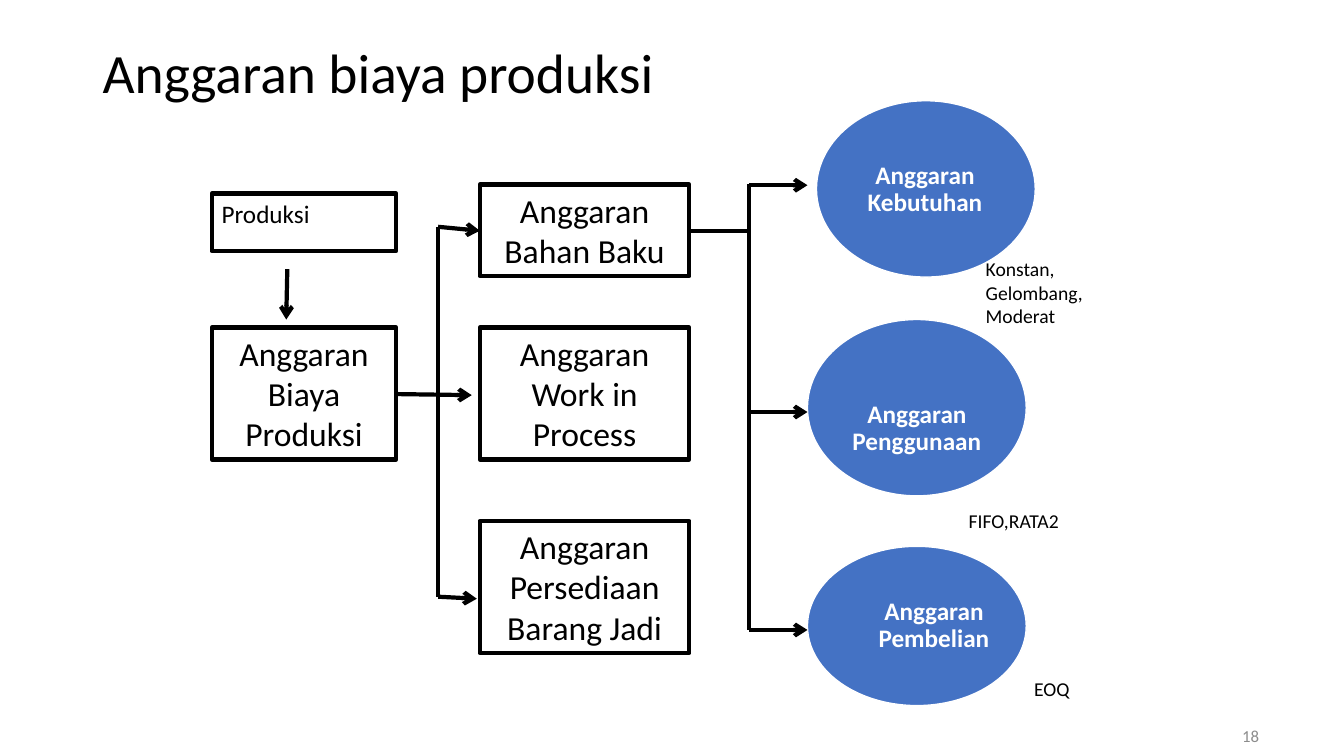
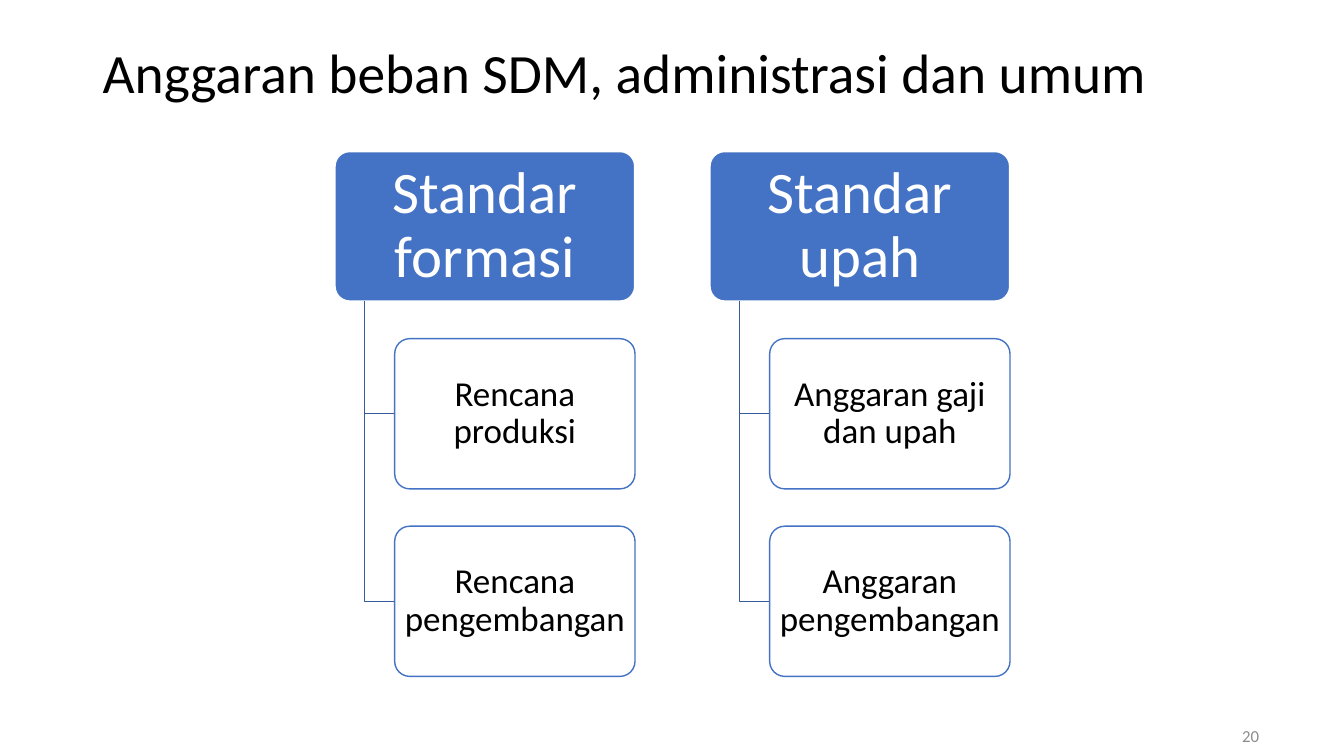
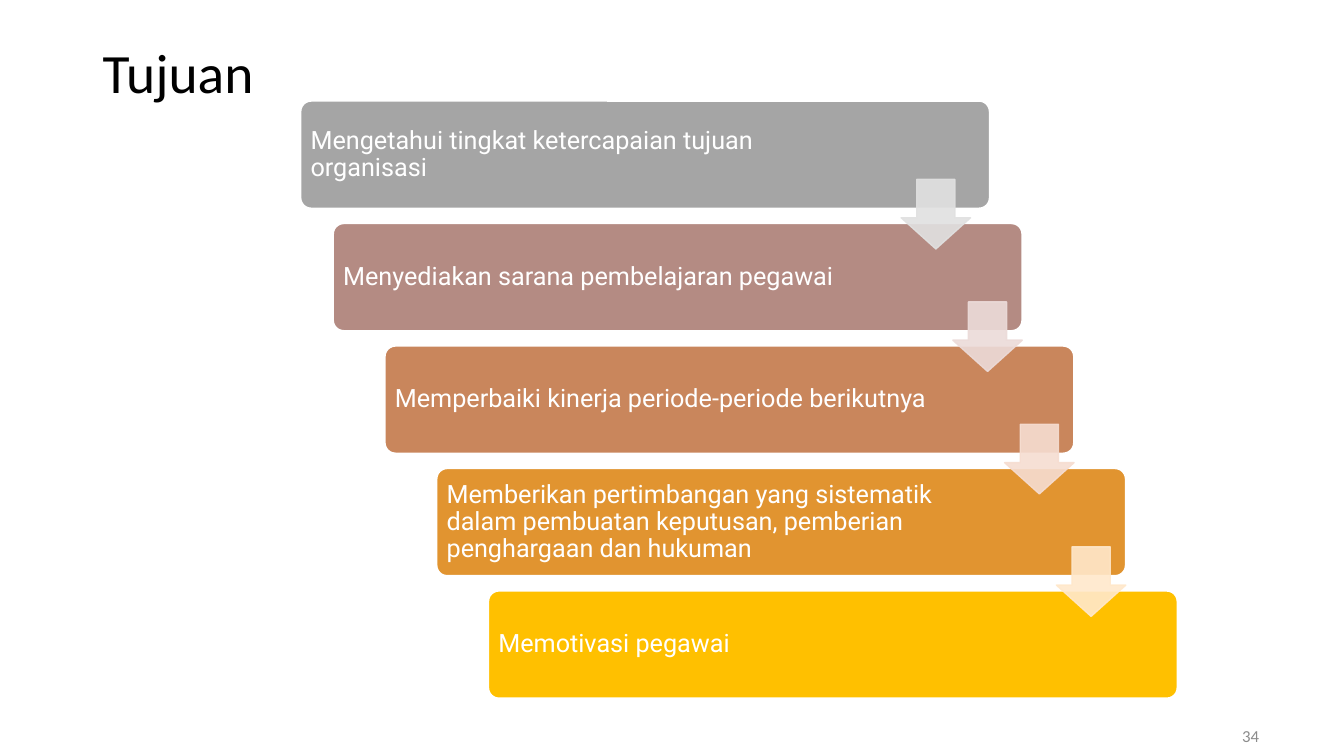
from lxml.etree import SubElement
from pptx import Presentation
from pptx.dml.color import RGBColor
from pptx.enum.shapes import MSO_CONNECTOR, MSO_SHAPE
from pptx.enum.text import MSO_ANCHOR, PP_ALIGN
from pptx.oxml.ns import qn
from pptx.util import Inches, Pt

SLIDE_WIDTH, SLIDE_HEIGHT = Inches(13.33), Inches(7.5)
COLOURS = {
    "ink": "000000", "paper": "FFFFFF", "accent": "4472C4",
    "branch": "365B9D", "page": "8C8C8C",
}
STEP_COLOURS = ["A5A5A5", "B48B83", "C9865C", "E19430", "FFC000"]
ARROW_COLOURS = ["E1E1E1", "ECDBD9", "F6DDD1", "FFE8CB"]
BODY_FONT, STEP_FONT = "Calibri", "Roboto"


def across(share):
    """Percent of the slide width as a length."""
    return round(SLIDE_WIDTH * share / 100)


def down(share):
    """Percent of the slide height as a length."""
    return round(SLIDE_HEIGHT * share / 100)


def place(left, top, width, height):
    return across(left), down(top), across(width), down(height)


def colour(name):
    return RGBColor.from_string(COLOURS.get(name, name))


def write(shape, text, size, ink="ink", font=BODY_FONT, align=PP_ALIGN.LEFT,
          anchor=MSO_ANCHOR.MIDDLE, spacing=None, bold=False,
          margins=(0.1, 0.05, 0.1, 0.05)):
    """Fill a shape with one paragraph; margins are left, top, right, bottom."""
    frame = shape.text_frame
    frame.word_wrap = True
    frame.vertical_anchor = anchor
    (frame.margin_left, frame.margin_top,
     frame.margin_right, frame.margin_bottom) = map(Inches, margins)
    paragraph = frame.paragraphs[0]
    paragraph.alignment = align
    paragraph.line_spacing = spacing
    run = paragraph.add_run()
    run.text = text
    run.font.name = font
    run.font.size = Pt(size)
    run.font.bold = bold
    run.font.color.rgb = colour(ink)


def add_text(slide, box, text, size, **style):
    write(slide.shapes.add_textbox(*place(*box)), text, size, **style)


def style_outline(shape, fill, line, width):
    shape.shadow.inherit = False
    if fill:
        shape.fill.solid()
        shape.fill.fore_color.rgb = colour(fill)
    else:
        shape.fill.background()
    shape.line.color.rgb = colour(line)
    shape.line.width = Pt(width)


def add_figure(slide, kind, box, fill, line, width, adjustments=()):
    shape = slide.shapes.add_shape(kind, *place(*box))
    style_outline(shape, fill, line, width)
    for index, value in enumerate(adjustments):
        shape.adjustments[index] = value
    return shape


def add_card(slide, box, fill, line, width):
    return add_figure(slide, MSO_SHAPE.ROUNDED_RECTANGLE, box, fill, line, width, [0.1])


def fade(shape, percent):
    """Set the opacity of a shape's fill and line."""
    for element in shape.element.spPr.iter(qn("a:srgbClr")):
        SubElement(element, qn("a:alpha"), val=str(percent * 1000))


def add_line(slide, start, end, arrow=False):
    line = slide.shapes.add_connector(
        MSO_CONNECTOR.STRAIGHT, across(start[0]), down(start[1]),
        across(end[0]), down(end[1]))
    line.line.color.rgb = colour("ink")
    line.line.width = Pt(3)
    if arrow:
        SubElement(line.line._get_or_add_ln(), qn("a:tailEnd"), type="arrow")
    SubElement(line.element.spPr, qn("a:effectLst"))


def add_elbow(slide, left, top, right, bottom):
    """Draw a branch that goes down and then right."""
    builder = slide.shapes.build_freeform(across(left), down(top))
    builder.add_line_segments(
        [(across(left), down(bottom)), (across(right), down(bottom))], close=False)
    style_outline(builder.convert_to_shape(), None, "branch", 1)


def add_slide(presentation, title, number):
    slide = presentation.slides.add_slide(presentation.slide_layouts[6])
    add_text(slide, (6.9, 5.33, 86.25, 9.2), title, 39.6, spacing=0.9)
    add_text(slide, (71.93, 95.6, 22.5, 3.47), number, 12, ink="page",
             align=PP_ALIGN.RIGHT)
    return slide


def build_production(presentation):
    slide = add_slide(presentation, "Anggaran biaya produksi", "18")

    source, budget = (15.75, 13.73), (35.7, 15.6)
    for (left, width), top, height, text, size, align in [
        (source, 25.6, 7.6, "Produksi", 18, PP_ALIGN.LEFT),
        (source, 43.33, 17.47, "Anggaran Biaya Produksi", 24, PP_ALIGN.CENTER),
        (budget, 24.4, 12.13, "Anggaran Bahan Baku", 24, PP_ALIGN.CENTER),
        (budget, 43.33, 17.47, "Anggaran Work in Process", 24, PP_ALIGN.CENTER),
        (budget, 68.93, 17.47, "Anggaran Persediaan Barang Jadi", 24, PP_ALIGN.CENTER),
    ]:
        box = add_figure(slide, MSO_SHAPE.RECTANGLE, (left, top, width, height),
                         None, "ink", 3)
        write(box, text, size, align=align, anchor=MSO_ANCHOR.TOP)

    for left, top, height, label_left, label_top, text in [
        (60.75, 13.33, 23.33, 63.08, 16.8, "Anggaran Kebutuhan"),
        (60.08, 42.27, 23.33, 62.48, 48.4, "Anggaran Penggunaan"),
        (60.08, 72.27, 21.07, 63.75, 75.33, "Anggaran Pembelian"),
    ]:
        add_figure(slide, MSO_SHAPE.OVAL, (left, top, 16.28, height),
                   "accent", "paper", 1)
        add_text(slide, (label_left, label_top, 11.48, height * 0.71), text, 18,
                 ink="paper", bold=True, align=PP_ALIGN.CENTER, spacing=0.9,
                 margins=(0.05,) * 4)

    budget_trunk, detail_trunk, detail_tip = 32.6, 55.73, 60.08
    add_line(slide, (budget_trunk, 30), (budget_trunk, 78.93))
    add_line(slide, (detail_trunk, 24.4), (detail_trunk, 83.33))
    add_line(slide, (51.38, 30.53), (detail_trunk, 30.53))
    for start, end in [
        ((21.38, 35.6), (21.3, 42.27)),
        ((29.48, 52.13), (35.1, 52.27)),
        ((budget_trunk, 30), (35.7, 30.53)),
        ((budget_trunk, 78.93), (35.48, 79.2)),
        *(((detail_trunk, row), (detail_tip, row)) for row in (24.5, 54.5, 83.33)),
    ]:
        add_line(slide, start, end, arrow=True)

    for box, text, align in [
        ((71.33, 66.67, 8.78, 4.53), "FIFO,RATA2", PP_ALIGN.LEFT),
        ((73.88, 88.93, 8.78, 4.53), "EOQ", PP_ALIGN.CENTER),
        ((72.6, 33.33, 9.98, 10.8), "Konstan, Gelombang, Moderat", PP_ALIGN.LEFT),
    ]:
        add_text(slide, box, text, 14, align=align, anchor=MSO_ANCHOR.TOP)


def build_staff(presentation):
    slide = add_slide(presentation, "Anggaran beban SDM, administrasi dan umum", "20")
    first_left, column_pitch, width = 24.9, 27.9, 22.35
    first_top, row_pitch, height = 20, 24.8, 19.87
    groups = [
        ("Standar formasi", ["Rencana produksi", "Rencana pengembangan"]),
        ("Standar upah", ["Anggaran gaji dan upah", "Anggaran pengembangan"]),
    ]
    centred = {"align": PP_ALIGN.CENTER, "spacing": 0.9}
    for column, (heading, items) in enumerate(groups):
        left = first_left + column * column_pitch
        card = add_card(slide, (left, first_top, width, height), "accent", "paper", 1.5)
        write(card, heading, 42, ink="paper", margins=(0.09, 0.06, 0.09, 0.06), **centred)
        item_left = left + width * 0.2
        for row, item in enumerate(items, start=1):
            top = first_top + row * row_pitch
            add_elbow(slide, left + width * 0.1, first_top + height,
                      item_left, top + height / 2)
            card = add_card(slide, (item_left, top, width * 0.8, height),
                            "paper", "accent", 1)
            write(card, item, 25, margins=(0.05, 0.03, 0.05, 0.03), **centred)


def build_goals(presentation):
    slide = add_slide(presentation, "Tujuan", "34")
    goals = [
        "Mengetahui tingkat ketercapaian tujuan organisasi",
        "Menyediakan sarana pembelajaran pegawai",
        "Memperbaiki kinerja periode-periode berikutnya",
        "Memberikan pertimbangan yang sistematik dalam pembuatan keputusan, "
        "pemberian penghargaan dan hukuman",
        "Memotivasi pegawai",
    ]
    shift, pitch = 3.85, 16.2
    for index, (goal, fill) in enumerate(zip(goals, STEP_COLOURS)):
        left = 20.92 + index * shift if index else 22.35
        step = add_card(slide, (left, 13.33 + index * pitch, 51.3, 14.27),
                        fill, "paper", 1.5)
        write(step, goal, 18, ink="paper", font=STEP_FONT, spacing=0.9,
              margins=(0.07, 0.07, 1.27, 0.07))
    for index, fill in enumerate(ARROW_COLOURS):
        arrow = add_figure(slide, MSO_SHAPE.DOWN_ARROW,
                           (67.05 + index * shift, 23.73 + index * pitch, 5.17, 9.2),
                           fill, fill, 1, [0.55, 0.45])
        fade(arrow, 90)


def main():
    presentation = Presentation()
    presentation.slide_width, presentation.slide_height = SLIDE_WIDTH, SLIDE_HEIGHT
    build_production(presentation)
    build_staff(presentation)
    build_goals(presentation)
    presentation.save("out.pptx")


if __name__ == "__main__":
    main()
